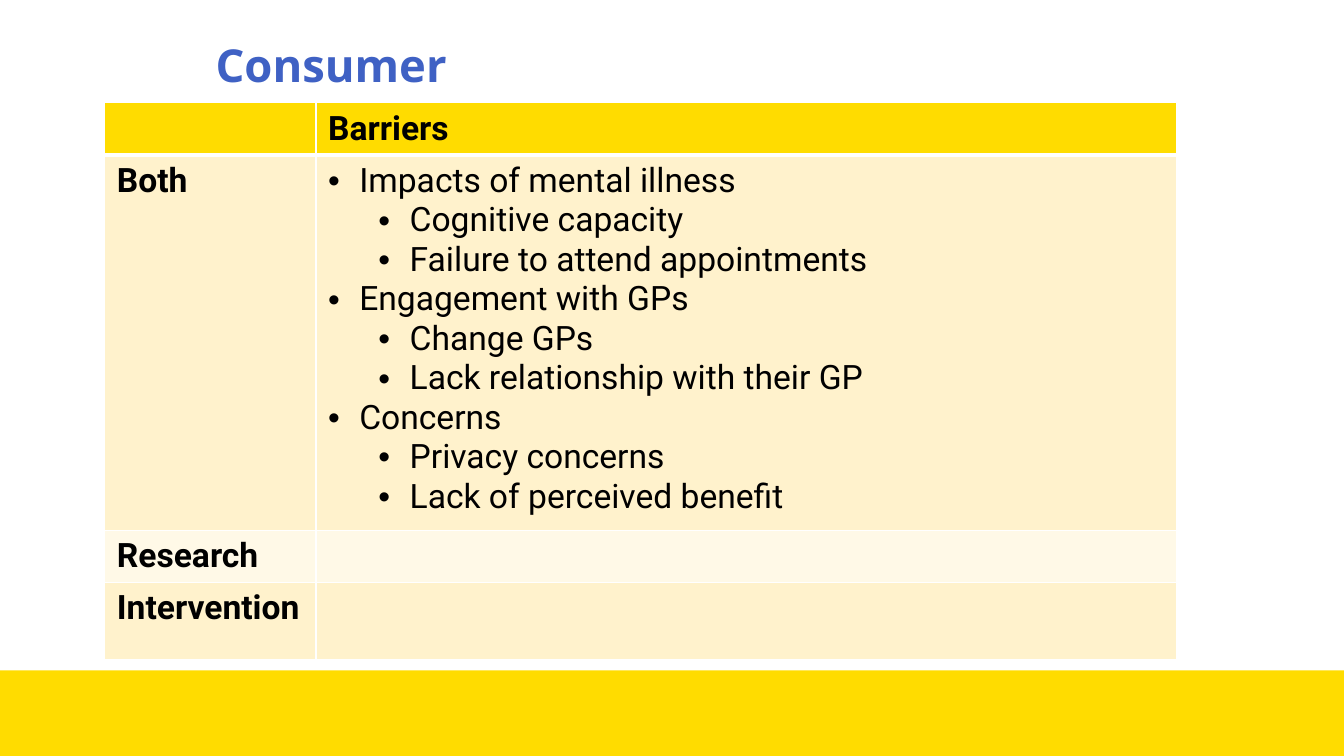
from dataclasses import dataclass

from lxml import etree
from pptx import Presentation, util as u
from pptx.dml.color import RGBColor
from pptx.enum import shapes, text
from pptx.oxml.ns import qn


@dataclass(frozen=True)
class Theme:
    yellow: str = "FFDC00"
    band_dark: str = "FFF2CC"
    band_light: str = "FFF9E7"
    border: str = "FFFFFF"
    blue: str = "3F61C4"
    black: str = "000000"
    title_font: str = "Open Sans"
    body_font: str = "Roboto"
    title_size: float = 32.4
    body_size: float = 24


THEME = Theme()
WIDTH, HEIGHT = 13.33, 7.5
BULLET_INDENT, LEVEL_STEP = 0.31, 0.5

# Each barrier has a level and its wording
BARRIERS = [
    (0, "Impacts of mental illness"),
    (1, "Cognitive capacity"),
    (1, "Failure to attend appointments"),
    (0, "Engagement with GPs"),
    (1, "Change GPs"),
    (1, "Lack relationship with their GP"),
    (0, "Concerns"),
    (1, "Privacy concerns"),
    (1, "Lack of perceived benefit"),
]


def add_bullet(paragraph, level):
    paragraph.level = level
    properties = paragraph._p.get_or_add_pPr()
    properties.set("marL", str(u.Inches(BULLET_INDENT + level * LEVEL_STEP)))
    properties.set("indent", str(-u.Inches(BULLET_INDENT)))
    font = etree.SubElement(properties, qn("a:buFont"))
    font.set("typeface", "Arial")
    etree.SubElement(properties, qn("a:buChar")).set("char", "•")


def write_text(frame, lines, *, font=THEME.body_font, size=THEME.body_size,
               color=THEME.black, bold=False, bullets=False, spacing=None):
    """Fill a text frame with (level, wording) lines."""
    for index, (level, wording) in enumerate(lines):
        paragraph = frame.add_paragraph() if index else frame.paragraphs[0]
        if spacing:
            paragraph.line_spacing = spacing
        if bullets:
            add_bullet(paragraph, level)
        run = paragraph.add_run()
        run.text = wording
        run.font.name = font
        run.font.size = u.Pt(size)
        run.font.bold = bold
        run.font.color.rgb = RGBColor.from_string(color)


def set_borders(cell, bottom=1, top=1):
    properties = cell._tc.get_or_add_tcPr()
    for side, points in (("L", 1), ("R", 1), ("T", top), ("B", bottom)):
        line = etree.SubElement(properties, qn(f"a:ln{side}"))
        line.set("w", str(u.Pt(points)))
        fill = etree.SubElement(line, qn("a:solidFill"))
        etree.SubElement(fill, qn("a:srgbClr")).set("val", THEME.border)


def draw_footer(slide, left, top, width, height):
    band = slide.shapes.add_shape(
        shapes.MSO_SHAPE.RECTANGLE, *map(u.Inches, (left, top, width, height)))
    band.shadow.inherit = False
    band.fill.solid()
    band.fill.fore_color.rgb = RGBColor.from_string(THEME.yellow)
    band.line.fill.background()


def draw_title(slide, left, top, width, height):
    box = slide.shapes.add_textbox(*map(u.Inches, (left, top, width, height)))
    frame = box.text_frame
    frame.word_wrap = True
    frame.vertical_anchor = text.MSO_ANCHOR.MIDDLE
    write_text(frame, [(0, "Consumer")], font=THEME.title_font,
               size=THEME.title_size, color=THEME.blue, bold=True, spacing=0.9)


def draw_table(slide, left, top, width, height):
    # Row label, barriers, fill and share of the table height
    rows = [
        ("", [(0, "Barriers")], THEME.yellow, 0.094),
        ("Both", BARRIERS, THEME.band_dark, 0.672),
        ("Research", [], THEME.band_light, 0.094),
        ("Intervention", [], THEME.band_dark, 0.14),
    ]
    column_shares = (0.197, 0.803)
    table = slide.shapes.add_table(
        len(rows), len(column_shares),
        *map(u.Inches, (left, top, width, height))).table
    for column, share in zip(table.columns, column_shares):
        column.width = u.Inches(width * share)

    for index, (label, barriers, fill, share) in enumerate(rows):
        table.rows[index].height = u.Inches(height * share)
        header = index == 0
        for column, lines in enumerate(([(0, label)] if label else [], barriers)):
            cell = table.cell(index, column)
            cell.margin_left = cell.margin_right = u.Inches(0.12)
            cell.margin_top = cell.margin_bottom = u.Inches(0.06)
            set_borders(cell, bottom=3 if header else 1, top=3 if index == 1 else 1)
            cell.fill.solid()
            cell.fill.fore_color.rgb = RGBColor.from_string(fill)
            write_text(cell.text_frame, lines, bold=header or column == 0,
                       bullets=column == 1 and not header)


def main():
    presentation = Presentation()
    presentation.slide_width = u.Inches(WIDTH)
    presentation.slide_height = u.Inches(HEIGHT)
    slide = presentation.slides.add_slide(presentation.slide_layouts[6])
    draw_footer(slide, 0, 6.65, WIDTH, HEIGHT - 6.65)
    draw_title(slide, 2.04, 0.33, 8.64, 0.69)
    draw_table(slide, 1.04, 1.02, 10.63, 5.43)
    presentation.save("out.pptx")


if __name__ == "__main__":
    main()
